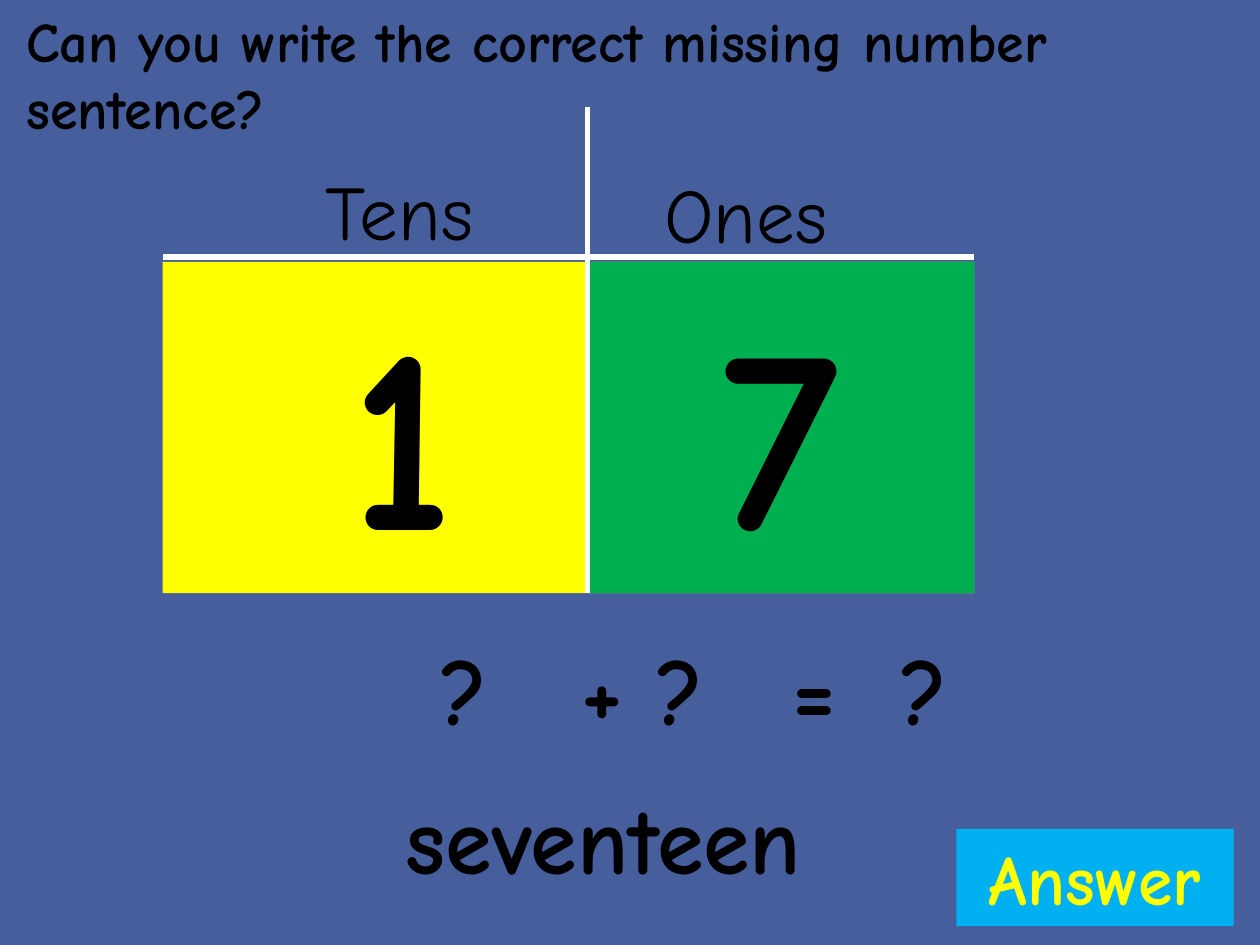
from lxml.etree import SubElement
from pptx import Presentation
from pptx.dml.color import RGBColor
from pptx.enum.shapes import MSO_CONNECTOR, MSO_SHAPE
from pptx.enum.text import MSO_ANCHOR, PP_ALIGN
from pptx.oxml.ns import qn
from pptx.util import Cm, Pt

BLUE = RGBColor(0x46, 0x5E, 0x9C)
YELLOW = RGBColor(0xFF, 0xFF, 0x00)
GREEN = RGBColor(0x00, 0xB0, 0x50)
SKY = RGBColor(0x00, 0xB0, 0xF0)
BLACK = RGBColor(0x00, 0x00, 0x00)
WHITE = RGBColor(0xFF, 0xFF, 0xFF)
FONT = "Comic Neue"


def write(shape, text, size, color=BLACK, bold=True,
          align=PP_ALIGN.CENTER, anchor=MSO_ANCHOR.TOP):
    frame = shape.text_frame
    frame.text = text
    frame.word_wrap = True
    frame.vertical_anchor = anchor
    para = frame.paragraphs[0]
    para.alignment = align
    for span in para.runs:
        span.font.name = FONT
        span.font.size = Pt(size)
        span.font.bold = bold
        span.font.color.rgb = color
    return shape


def add_text(page, box, text, size, **style):
    shape = page.shapes.add_textbox(*map(Cm, box))
    return write(shape, text, size, **style)


def add_block(page, box, fill, text, size, color=BLACK):
    block = page.shapes.add_shape(MSO_SHAPE.RECTANGLE, *map(Cm, box))
    block.shadow.inherit = False
    block.fill.solid()
    block.fill.fore_color.rgb = fill
    block.line.fill.background()
    return write(block, text, size, color)


def add_rule(page, start, end):
    rule = page.shapes.add_connector(
        MSO_CONNECTOR.STRAIGHT, *map(Cm, start + end))
    rule.line.color.rgb = WHITE
    rule.line.width = Pt(3)
    SubElement(rule._element.spPr, qn("a:effectLst"))


def add_place_value_chart(page, left, top, width, height):
    """Tens and ones blocks with headings above and white rules."""
    right, bottom = left + width, top + height
    ones_width = 7.8
    divider = right - ones_width

    add_rule(page, (left, top - 0.1), (right, top - 0.1))

    # The tens block runs on behind the ones block
    tens = add_block(page, (left, top, width, height), YELLOW, "1", 150)
    tens.text_frame.margin_right = Cm(6.96)
    add_block(page, (divider, top, ones_width, height), GREEN, "7", 150)
    add_rule(page, (divider, top - 3.12), (divider, bottom))

    # Column headings; the first is the slide title
    heading = {"bold": False, "anchor": MSO_ANCHOR.MIDDLE}
    title = page.shapes.title
    title.left, title.top = Cm(left + 2.26), Cm(top - 2.64)
    title.width, title.height = Cm(5.03), Cm(3.18)
    write(title, "Tens", 44, **heading)
    add_text(page, (divider + 0.68, top - 2.59, 5.03, 3.18),
             "Ones", 44, **heading)


def add_number_sentence(page, left, top, height):
    """Missing sum: tens, ones and total."""
    step = 3.6
    for column, text in enumerate(("?", "+ ?")):
        add_text(page, (left + column * step, top, 4.19, height), text, 54)
    total = add_text(page, (left + 2 * step, top, 6.22, height),
                     "=\t?", 54, align=PP_ALIGN.LEFT)
    total.text_frame.margin_left = Cm(1.52)
    properties = total.text_frame.paragraphs[0]._p.get_or_add_pPr()
    stops = SubElement(properties, qn("a:tabLst"))
    SubElement(stops, qn("a:tab"), pos=str(Cm(2.18)), algn="l")


def main():
    deck = Presentation()
    deck.slide_width, deck.slide_height = Cm(25.4), Cm(19.05)
    page = deck.slides.add_slide(deck.slide_layouts[5])
    page.background.fill.solid()
    page.background.fill.fore_color.rgb = BLUE

    add_place_value_chart(page, 3.28, 5.28, 16.36, 6.68)
    add_number_sentence(page, 7.26, 12.6, 2.57)

    # Number word, question and answer button
    add_text(page, (6.17, 15.6, 11.99, 2.57), "seventeen", 54)
    add_text(page, (0.28, 0, 23.83, 3),
             "Can you write the correct missing number sentence?", 32,
             align=PP_ALIGN.LEFT)
    add_block(page, (19.28, 16.71, 5.59, 1.96), SKY, "Answer", 40, YELLOW)

    deck.save("out.pptx")


if __name__ == "__main__":
    main()
